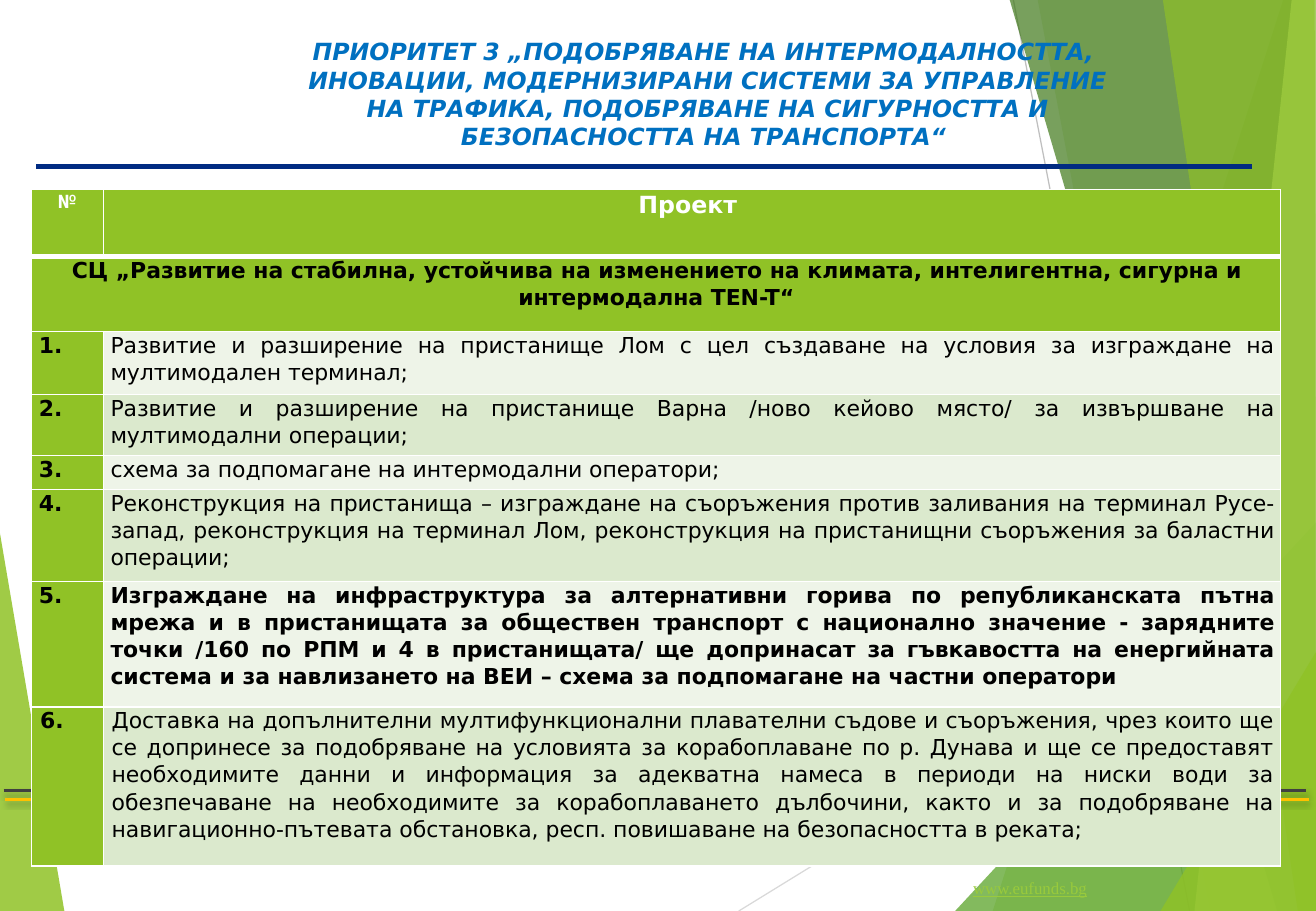
from lxml import etree
from pptx import Presentation
from pptx.dml.color import RGBColor
from pptx.enum.shapes import MSO_CONNECTOR
from pptx.enum.text import MSO_ANCHOR, PP_ALIGN
from pptx.oxml import parse_xml
from pptx.oxml.ns import nsdecls, qn
from pptx.util import Inches, Pt

# Colours and fonts
WHITE = RGBColor(0xFF, 0xFF, 0xFF)
BLACK = RGBColor(0, 0, 0)
LEAF = RGBColor(0x90, 0xC2, 0x26)
GRASS = RGBColor(0x54, 0xA0, 0x21)
FOREST = RGBColor(0x3F, 0x78, 0x19)
LIME = RGBColor(0xC0, 0xE4, 0x74)
LINK = RGBColor(0x99, 0xCA, 0x3C)
PALE = RGBColor(0xEE, 0xF4, 0xE8)
SOFT = RGBColor(0xDB, 0xE9, 0xCD)
BLUE = RGBColor(0x00, 0x70, 0xC0)
NAVY = RGBColor(0x00, 0x2B, 0x82)
AMBER = RGBColor(0xFF, 0xC0, 0x00)
CHARCOAL = RGBColor(0x40, 0x40, 0x40)
SILVER = RGBColor(0xBF, 0xBF, 0xBF)
MIST = RGBColor(0xD9, 0xD9, 0xD9)
SANS = "DejaVu Sans"

# Content
TITLE = [
    "ПРИОРИТЕТ 3 „ПОДОБРЯВАНЕ НА ИНТЕРМОДАЛНОСТТА, ",
    "ИНОВАЦИИ, МОДЕРНИЗИРАНИ СИСТЕМИ ЗА УПРАВЛЕНИЕ НА ТРАФИКА, "
    "ПОДОБРЯВАНЕ НА СИГУРНОСТТА И БЕЗОПАСНОСТТА НА ТРАНСПОРТА“ ",
]
WEBSITE = "www.eufunds.bg"
OBJECTIVE = ("СЦ „Развитие на стабилна, устойчива на изменението на климата, "
             "интелигентна, сигурна и интермодална TEN-T“")
PROJECTS = [
    "Развитие и разширение на пристанище Лом с цел създаване на условия за "
    "изграждане на мултимодален терминал;",
    "Развитие и разширение на пристанище Варна /ново кейово място/ за "
    "извършване на мултимодални операции;",
    "схема за подпомагане на интермодални оператори;",
    "Реконструкция на пристанища – изграждане на съоръжения против заливания "
    "на терминал Русе-запад, реконструкция на терминал Лом, реконструкция на "
    "пристанищни съоръжения за баластни операции;",
    "Изграждане на инфраструктура за алтернативни горива по републиканската "
    "пътна мрежа и в пристанищата за обществен транспорт с национално значение "
    "- зарядните точки /160 по РПМ и 4 в пристанищата/ ще допринасат за "
    "гъвкавостта на енергийната система и за навлизането на ВЕИ – схема за "
    "подпомагане на частни оператори",
    "Доставка на допълнителни мултифункционални плавателни съдове и "
    "съоръжения, чрез които ще се допринесе за подобряване на условията за "
    "корабоплаване по р. Дунава и ще се предоставят необходимите данни и "
    "информация за адекватна намеса в периоди на ниски води за обезпечаване на "
    "необходимите за корабоплаването дълбочини, както и за подобряване на "
    "навигационно-пътевата обстановка, респ. повишаване на безопасността в "
    "реката;",
]
KEY_PROJECT = 5
COLUMN_WIDTHS = [0.59, 9.69]
ROW_HEIGHTS = [0.55, 0.62, 0.52, 0.5, 0.28, 0.76, 1.03, 1.31]

# Background: corner points, colour, opacity in percent
LEFT_FACET = ([(0, 4.39), (0.53, 7.5), (0, 7.5)], LEAF, 85)
RIGHT_FACETS = [
    ([(10.56, 0), (8.17, 7.5), (10.84, 7.5), (10.84, 0)], LEAF, 30),
    ([(8.54, 0), (9.96, 7.5), (10.84, 7.5), (10.84, 0)], LEAF, 20),
    ([(7.86, 7.5), (10.84, 4.29), (10.84, 7.5)], GRASS, 72),
    ([(8.31, 0), (10.51, 7.5), (10.84, 7.5), (10.84, 0)], FOREST, 70),
    ([(10.63, 0), (9.83, 7.5), (10.84, 7.5), (10.84, 0)], LIME, 70),
    ([(9.57, 0), (10.68, 7.5), (10.83, 7.5), (10.82, 0)], LEAF, 65),
    ([(9.55, 7.5), (10.84, 5.35), (10.84, 7.5)], LEAF, 80),
]
# Lines: start, end, colour, width in points, shadowed
THIN_LINES = [
    ((6.08, 7.5), (10.84, 4.57), MIST, 0.75, False),
    ((8.34, 0), (9.79, 7.5), SILVER, 0.75, False),
]
RULES = [
    ((0.03, 6.51), (10.75, 6.51), CHARCOAL, 2, True),
    ((0.04, 6.58), (10.77, 6.58), AMBER, 2, True),
    ((0.3, 1.37), (10.3, 1.37), NAVY, 3, False),
]

prs = Presentation()
prs.slide_width, prs.slide_height = Inches(10.83), Inches(7.5)
slide = prs.slides.add_slide(prs.slide_layouts[6])


def add_facet(points, color, opacity):
    corners = [(Inches(x), Inches(y)) for x, y in points]
    builder = slide.shapes.build_freeform(*corners[0])
    builder.add_line_segments(corners[1:], close=True)
    facet = builder.convert_to_shape()
    facet.shadow.inherit = False
    facet.line.fill.background()
    facet.fill.solid()
    facet.fill.fore_color.rgb = color
    srgb = facet.fill._xPr.find(".//" + qn("a:srgbClr"))
    etree.SubElement(srgb, qn("a:alpha"), val=str(opacity * 1000))


def add_line(start, end, color, width, shadowed):
    line = slide.shapes.add_connector(
        MSO_CONNECTOR.STRAIGHT, *map(Inches, start + end))
    line.line.color.rgb = color
    line.line.width = Pt(width)
    effects = etree.SubElement(line._element.spPr, qn("a:effectLst"))
    if shadowed:
        effects.append(parse_xml(
            f'<a:outerShdw {nsdecls("a")} blurRad="{Pt(3)}" dist="{Pt(2)}" '
            'dir="5400000" rotWithShape="0"><a:srgbClr val="000000">'
            '<a:alpha val="35000"/></a:srgbClr></a:outerShdw>'))


def style_text(paragraph, size, color, font=SANS, bold=False):
    for run in paragraph.runs:
        run.font.name, run.font.size = font, Pt(size)
        run.font.bold, run.font.color.rgb = bold, color


def fill_cell(cell, text, fill, size=13, color=BLACK, font=SANS, bold=True,
              align=PP_ALIGN.JUSTIFY, side=0.06, top=1, bottom=1):
    cell.margin_left = cell.margin_right = Inches(side)
    cell.margin_top = cell.margin_bottom = 0
    properties = cell._tc.get_or_add_tcPr()
    for edge, width in (("L", 1), ("R", 1), ("T", top), ("B", bottom)):
        properties.append(parse_xml(
            f'<a:ln{edge} {nsdecls("a")} w="{Pt(width)}"><a:solidFill>'
            f'<a:srgbClr val="{WHITE}"/></a:solidFill></a:ln{edge}>'))
    cell.fill.solid()
    cell.fill.fore_color.rgb = fill
    cell.text_frame.text = text
    paragraph = cell.text_frame.paragraphs[0]
    paragraph.alignment, paragraph.line_spacing = align, 1.07
    style_text(paragraph, size, color, font, bold)


# Background facets and rules
add_facet(*LEFT_FACET)
for thin_line in THIN_LINES:
    add_line(*thin_line)
for right_facet in RIGHT_FACETS:
    add_facet(*right_facet)
for rule in RULES:
    add_line(*rule)

# Web address
website = slide.shapes.add_textbox(
    Inches(7.91), Inches(7.18), Inches(1.16), Inches(0.27)).text_frame
website.word_wrap = False
website.text = WEBSITE
style_text(website.paragraphs[0], 10, LINK, "Times New Roman")
website.paragraphs[0].runs[0].font.underline = True

# Title
title = slide.shapes.add_textbox(
    Inches(2.35), Inches(0.29), Inches(6.95), Inches(1)).text_frame
title.word_wrap = True
title.vertical_anchor = MSO_ANCHOR.BOTTOM
title.text = "\n".join(TITLE)
for paragraph in title.paragraphs:
    paragraph.alignment = PP_ALIGN.CENTER
    style_text(paragraph, 14, BLUE, bold=True)
    paragraph.runs[0].font.italic = True

# Project table
table = slide.shapes.add_table(
    len(ROW_HEIGHTS), len(COLUMN_WIDTHS), Inches(0.26), Inches(1.56),
    Inches(sum(COLUMN_WIDTHS)), Inches(sum(ROW_HEIGHTS))).table
table.first_row = table.horz_banding = False
for column, width in zip(table.columns, COLUMN_WIDTHS):
    column.width = Inches(width)
for row, height in zip(table.rows, ROW_HEIGHTS):
    row.height = Inches(height)

header = dict(fill=LEAF, color=WHITE, align=PP_ALIGN.CENTER, bottom=3)
fill_cell(table.cell(0, 0), "№", size=11, font="Roboto", **header)
fill_cell(table.cell(0, 1), "Проект ", size=14, **header)
table.cell(1, 0).merge(table.cell(1, 1))
for column, text in enumerate([OBJECTIVE, ""]):
    fill_cell(table.cell(1, column), text, LEAF, align=PP_ALIGN.CENTER, top=3)
for number, project in enumerate(PROJECTS, 1):
    side = 0.07 if number == len(PROJECTS) else 0.06
    fill_cell(table.cell(number + 1, 0), f"{number}.", LEAF, side=side)
    fill_cell(table.cell(number + 1, 1), project, PALE if number % 2 else SOFT,
              bold=number == KEY_PROJECT, side=side)

prs.save("out.pptx")
